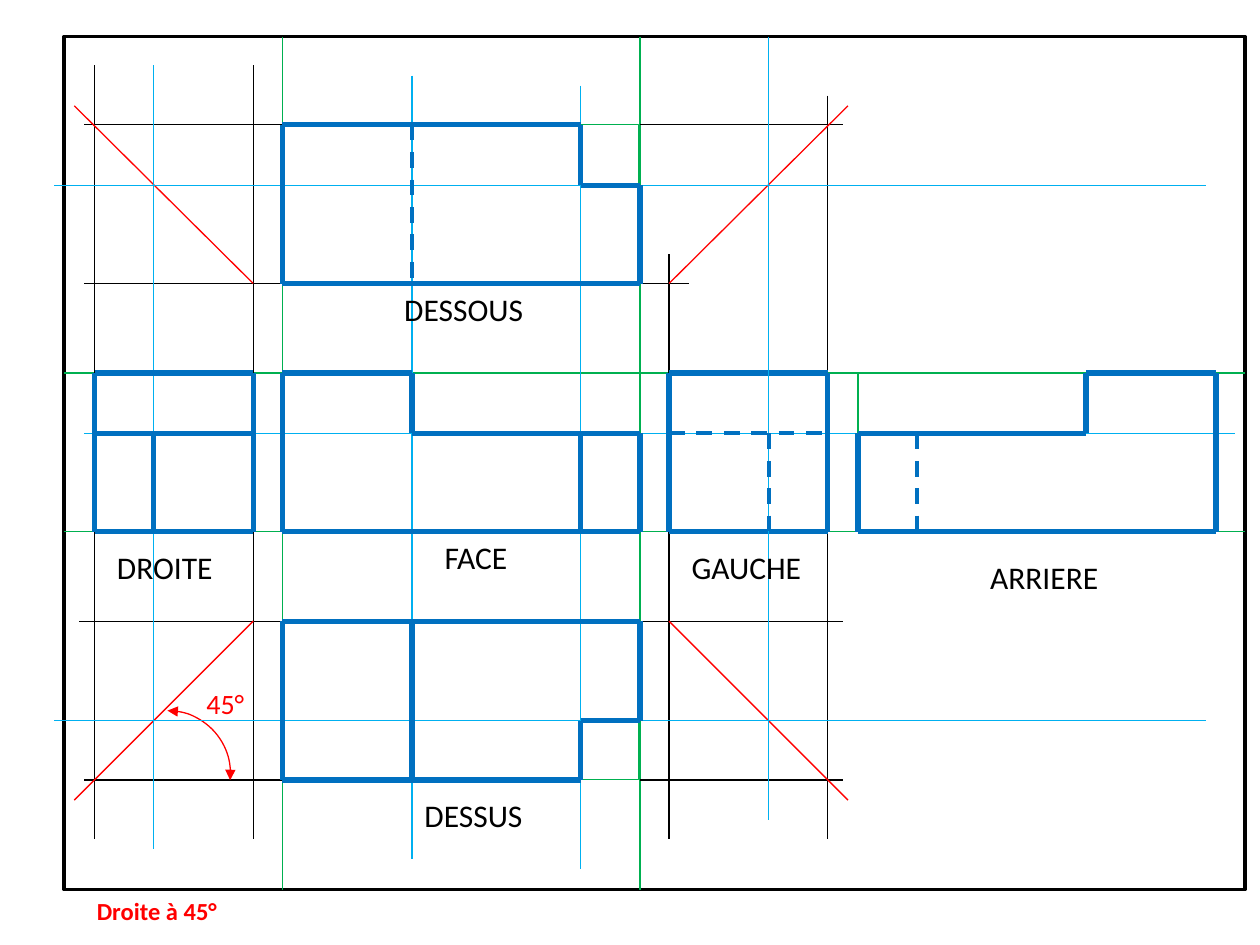
from itertools import pairwise

from lxml import etree
from pptx import Presentation
from pptx.dml.color import RGBColor
from pptx.enum.dml import MSO_LINE
from pptx.enum.shapes import MSO_CONNECTOR, MSO_SHAPE
from pptx.enum.text import MSO_AUTO_SIZE
from pptx.oxml.ns import qn
from pptx.util import Inches, Pt

BLACK = RGBColor(0x00, 0x00, 0x00)
RED = RGBColor(0xFF, 0x00, 0x00)
GREEN = RGBColor(0x00, 0xB0, 0x50)
CYAN = RGBColor(0x00, 0xB0, 0xF0)
BLUE = RGBColor(0x00, 0x70, 0xC0)
STRAIGHT = MSO_CONNECTOR.STRAIGHT
RECTANGLE, ARC = MSO_SHAPE.RECTANGLE, MSO_SHAPE.ARC
DASH = MSO_LINE.DASH
FIT_SHAPE = MSO_AUTO_SIZE.SHAPE_TO_FIT_TEXT

prs = Presentation()
prs.slide_width, prs.slide_height = Inches(10), Inches(7.5)
slide = prs.slides.add_slide(prs.slide_layouts[6])


def draw_path(points, color, width, dash=None):
    for ends in pairwise(points):
        (x1, y1), (x2, y2) = sorted(ends)
        edge = slide.shapes.add_connector(
            STRAIGHT, Inches(x1), Inches(y1), Inches(x2), Inches(y2))
        edge.line.color.rgb = color
        edge.line.width = Pt(width)
        edge.line.dash_style = dash
        etree.SubElement(edge._element.spPr, qn("a:effectLst"))


def draw_shape(kind, box, color, width):
    shape = slide.shapes.add_shape(kind, *map(Inches, box))
    shape.shadow.inherit = False
    shape.fill.background()
    shape.line.color.rgb = color
    shape.line.width = Pt(width)
    return shape


left, top, right, bottom = 0.51, 0.29, 9.88, 7.06
draw_shape(RECTANGLE, (left, top, right - left, bottom - top), BLACK, 2)

for y in (2.96, 4.22):
    draw_path([(left, y), (right, y)], GREEN, 0.75)
for x in (2.24, 5.08):
    draw_path([(x, top), (x, bottom)], GREEN, 0.75)

depth, length = 1.26, 2.83
for x, y, width in ((2.24, 0.99, length), (2.24, 4.93, length), (6.81, 2.96, length),
                    (5.31, 2.96, depth), (0.75, 2.96, depth)):
    draw_shape(RECTANGLE, (x, y, width, depth), GREEN, 0.75)

for x, start in ((2.01, 0.52), (0.75, 0.52), (6.57, 0.76), (5.31, 2.02)):
    draw_path([(x, start), (x, 2.96)], BLACK, 0.75)
    draw_path([(x, 4.22), (x, 6.66)], BLACK, 0.75)

for y, start, end in ((0.99, 0.67, 6.69), (2.25, 0.67, 5.47),
                      (4.93, 0.63, 6.69), (6.19, 0.67, 6.69)):
    draw_path([(start, y), (start + 1.61, y)], BLACK, 0.75)
    draw_path([(5.08, y), (end, y)], BLACK, 0.75)

for inner_x, outer_x in ((2.01, 0.59), (5.31, 6.73)):
    for inner_y, outer_y in ((2.25, 0.84), (4.93, 6.35)):
        draw_path([(inner_x, inner_y), (outer_x, outer_y)], RED, 0.75)

angle = draw_shape(ARC, (0.83, 5.64, 1, 1), RED, 0.75)
angle.adjustments[0], angle.adjustments[1] = 162, 3.57
for arrow in ("a:headEnd", "a:tailEnd"):
    etree.SubElement(angle.line._get_or_add_ln(), qn(arrow), type="triangle")

for x, start, end in ((4.61, 0.68, 6.9), (3.27, 0.6, 6.82),
                      (1.22, 0.52, 6.74)):
    draw_path([(x, start), (x, end)], CYAN, 0.75)
for y, start, end in ((3.44, 0.67, 9.8), (5.72, 0.43, 9.57), (1.47, 0.43, 9.57)):
    draw_path([(start, y), (end, y)], CYAN, 0.75)

face = [(2.24, 2.96), (3.27, 2.96), (3.27, 3.44), (5.08, 3.44),
        (5.08, 4.22), (2.24, 4.22), (2.24, 2.96)]
droite = [(0.75, 2.96), (2.01, 2.96), (2.01, 4.22), (0.75, 4.22), (0.75, 2.96)]
dessus = [(2.24, 4.93), (5.08, 4.93), (5.08, 5.72), (4.61, 5.72),
          (4.61, 6.19), (2.24, 6.19), (2.24, 4.93)]
dessous = [(2.24, 0.99), (4.61, 0.99), (4.61, 1.47), (5.08, 1.47),
           (5.08, 2.25), (2.24, 2.25), (2.24, 0.99)]
gauche = [(5.31, 2.96), (6.57, 2.96), (6.57, 4.22), (5.31, 4.22), (5.31, 2.96)]
arriere = [(6.81, 3.44), (8.62, 3.44), (8.62, 2.96), (9.65, 2.96),
           (9.65, 4.22), (6.81, 4.22), (6.81, 3.44)]
visible_edges = [
    [(4.61, 3.44), (4.61, 4.22)],
    [(0.75, 3.44), (2.01, 3.44)],
    [(1.22, 3.44), (1.22, 4.22)],
    [(3.27, 4.93), (3.27, 6.19)],
]
hidden_edges = [
    [(3.27, 0.99), (3.27, 2.25)],
    [(5.31, 3.44), (6.57, 3.44)],
    [(6.1, 3.44), (6.1, 4.22)],
    [(7.28, 3.44), (7.28, 4.22)],
]
for outline in (face, droite, dessus, dessous, gauche, arriere, *visible_edges):
    draw_path(outline, BLUE, 3)
draw_path([(6.1, top), (6.1, 6.51)], CYAN, 0.75)
for edge in hidden_edges:
    draw_path(edge, BLUE, 2.25, DASH)

view_name = {"size": Pt(18), "bold": False}
angle_value = {"size": Pt(16), "bold": False}
legend = {"size": Pt(14), "bold": True}
for text, box, color, font_format in (
    ("45°", (1.54, 5.4, 0.51, 0.37), RED, angle_value),
    ("FACE", (3.43, 4.22, 0.7, 0.4), BLACK, view_name),
    ("DESSOUS", (3.11, 2.25, 1.15, 0.4), BLACK, view_name),
    ("DROITE", (0.83, 4.3, 0.97, 0.4), BLACK, view_name),
    ("GAUCHE", (5.39, 4.3, 1.08, 0.4), BLACK, view_name),
    ("DESSUS", (3.27, 6.27, 0.99, 0.4), BLACK, view_name),
    ("ARRIERE", (7.76, 4.38, 1.07, 0.4), BLACK, view_name),
    ("Droite à 45°", (0.67, 7.06, 1.16, 0.34), RED, legend),
):
    frame = slide.shapes.add_textbox(*map(Inches, box)).text_frame
    frame.word_wrap = False
    frame.auto_size = FIT_SHAPE
    run = frame.paragraphs[0].add_run()
    run.text = text
    run.font.name = "Calibri"
    run.font.color.rgb = color
    for attribute, value in font_format.items():
        setattr(run.font, attribute, value)

prs.save("out.pptx")
